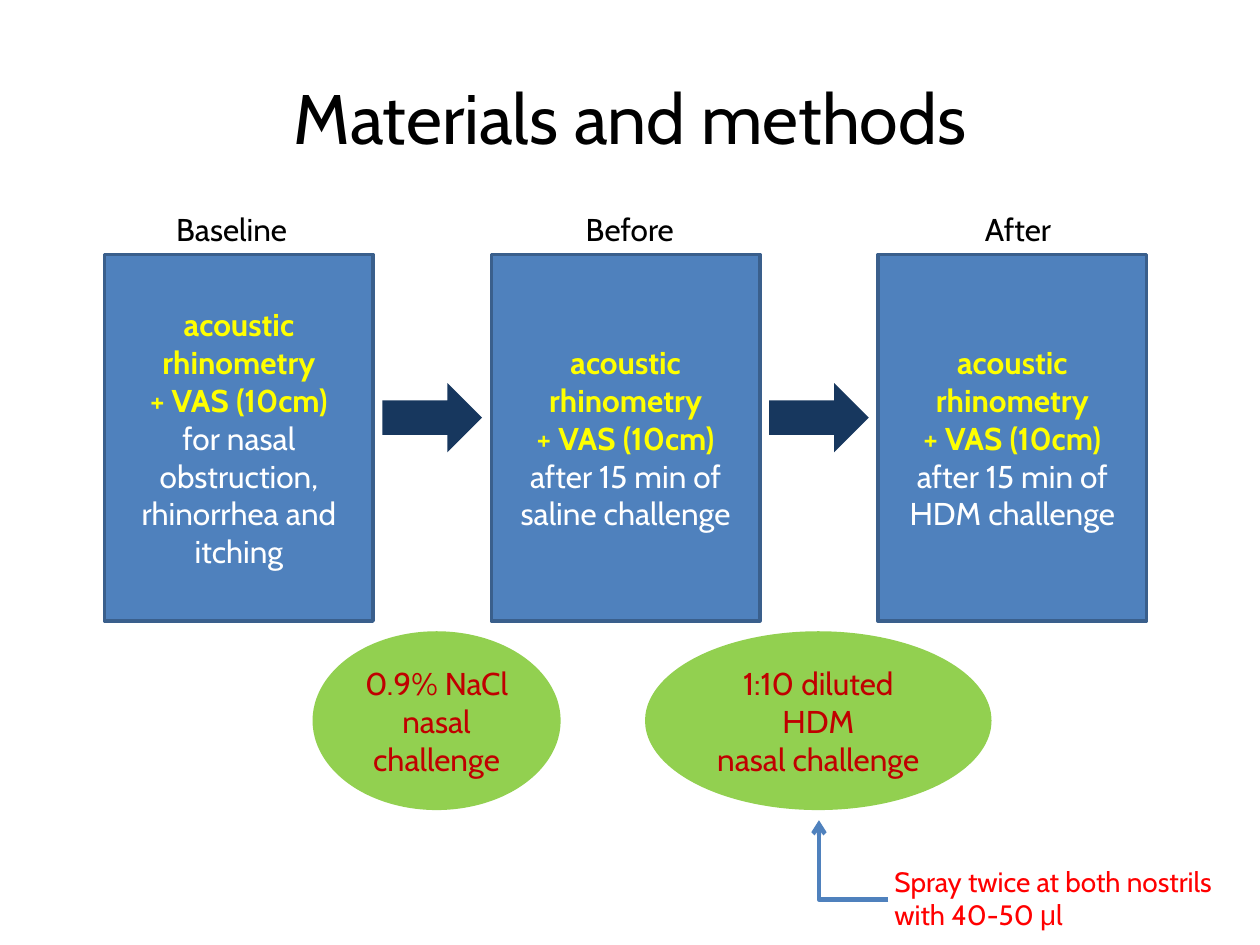
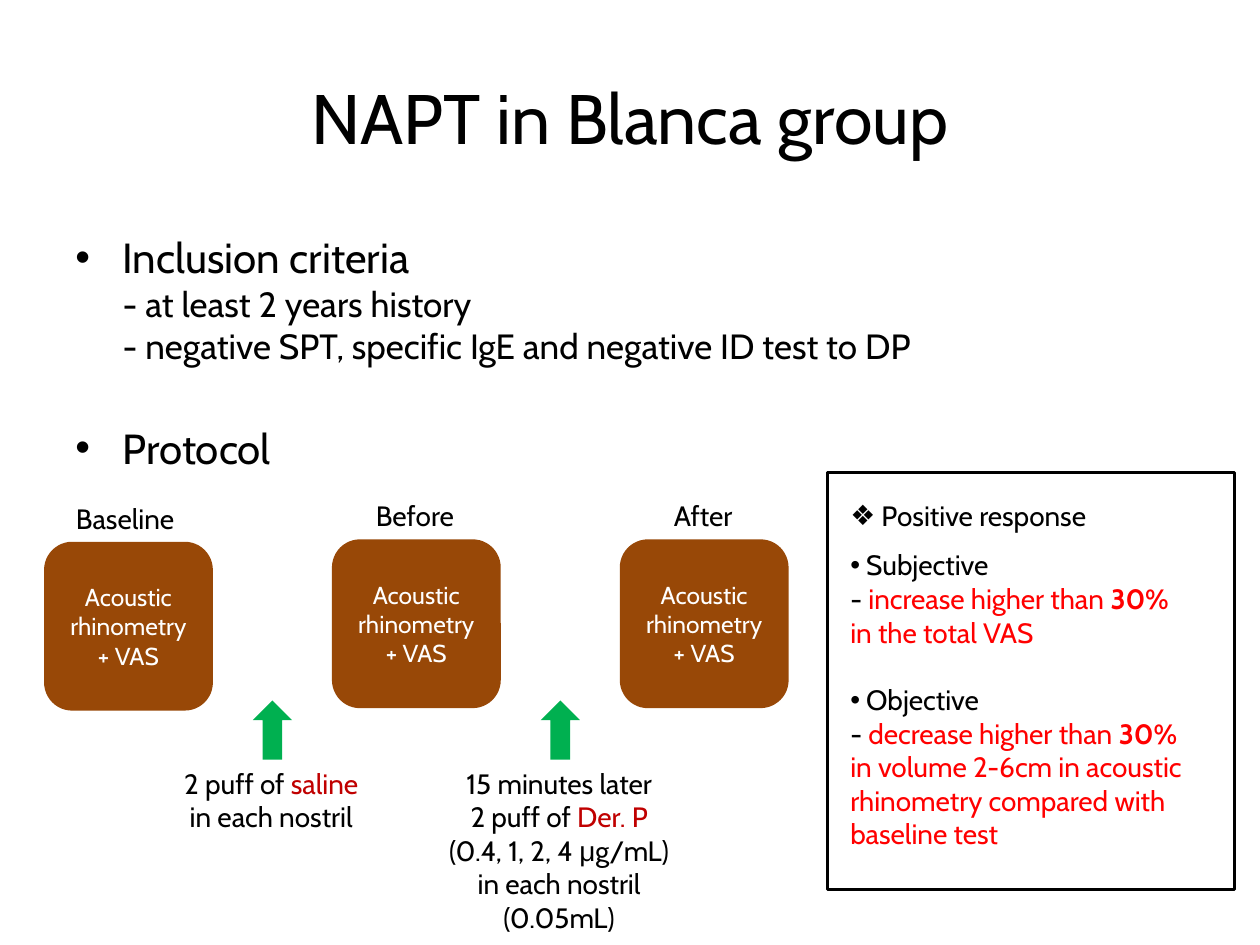
"""Builds two slides on nasal provocation: study methods and the NAPT protocol."""
from lxml import etree
from pptx import Presentation
from pptx.dml.color import RGBColor
from pptx.enum.shapes import MSO_CONNECTOR, MSO_SHAPE
from pptx.enum.text import MSO_ANCHOR, MSO_AUTO_SIZE, PP_ALIGN
from pptx.oxml.ns import qn
from pptx.util import Pt

RECT, ROUND, OVAL = MSO_SHAPE.RECTANGLE, MSO_SHAPE.ROUNDED_RECTANGLE, MSO_SHAPE.OVAL
RIGHT_ARROW, UP_ARROW = MSO_SHAPE.RIGHT_ARROW, MSO_SHAPE.UP_ARROW
ELBOW = MSO_CONNECTOR.ELBOW
LEFT, CENTER = PP_ALIGN.LEFT, PP_ALIGN.CENTER
TOP, MIDDLE = MSO_ANCHOR.TOP, MSO_ANCHOR.MIDDLE
GROW, FIXED = MSO_AUTO_SIZE.SHAPE_TO_FIT_TEXT, MSO_AUTO_SIZE.NONE

COLOURS = {
    "black": "000000", "white": "FFFFFF", "yellow": "FFFF00", "red": "FF0000",
    "dark red": "C00000", "blue": "4F81BD", "edge blue": "3A5F8C", "navy": "17375E",
    "lime": "92D050", "brown": "984807", "green": "00B050",
}
FONT, SYMBOL_FONT = "Cabin", "Arial"
SLIDE_SIZE = (720, 540)
TITLE_AREA = (36, 21.6, 648, 90)

METHODS_TITLE = "Materials and methods"
MEASUREMENT = "acoustic rhinometry"
VAS = "VAS (10cm)\n"
VISITS = [
    ("Baseline", (93.6, 81.4), "for nasal obstruction, rhinorrhea and itching"),
    ("Before", (327.6, 66.2), "after 15 min of saline challenge"),
    ("After", (555.8, 53.3), "after 15 min of HDM challenge"),
]
CHALLENGES = [
    ("0.9% NaCl nasal challenge", 178.6, 141.8),
    ("1:10 diluted HDM\nnasal challenge", 368.6, 198),
]
SPRAY = [
    {"runs": [("Spray twice at both nostrils", {})]},
    {"runs": [("with 40-50 ", {}), ("μ", {"font": SYMBOL_FONT}), ("l", {})]},
]
SPRAY_AREA = (504, 490.3, 216.7, 46)
SPRAY_ARROW = (507.6, 514.1, 468, 468.7)

NAPT_TITLE = "NAPT in Blanca group"
OUTLINE = [
    {"bullet": "•", "indent": 27, "before": 2, "runs": [
        ("Inclusion criteria\n", {"size": 24}),
        ("- at least 2 years history\n"
         "- negative SPT, specific IgE and negative ID test to DP", {"size": 20})]},
    {"bullet": "•", "indent": 27, "before": 32, "runs": [("Protocol", {"size": 24})]},
]
STAGE_TEXT = "Acoustic rhinometry\n+ VAS"
STAGES = [("Baseline", 74.2, 309.6), ("Before", 60.5, 308.2), ("After", 49, 308.2)]
DARK_RED = {"colour": "dark red"}
DOSES = [
    (121, 46, [("2 puff of ", {}), ("saline\n", DARK_RED), ("in each nostril", {})]),
    (157, 104.4, [
        ("15 minutes later\n2 puff of ", {}), ("Der. P\n", DARK_RED),
        ("(0.4, 1, 2, 4 ", {}), ("μ", {"font": SYMBOL_FONT}),
        ("g/mL)\nin each nostril\n(0.05mL)", {})]),
]
RED = {"colour": "red"}
RED_BOLD = {"colour": "red", "bold": True}
RESPONSE_HEADING = [{"bullet": "❖", "runs": [(" Positive response", {})]}]
RESPONSE = [
    {"bullet": "•", "runs": [
        (" Subjective\n- ", {}), ("increase higher than ", RED), ("30%\n", RED_BOLD),
        ("in the total VAS", RED)]},
    {"bullet": "•", "before": 19.4, "runs": [
        (" Objective\n- ", {}), ("decrease higher than ", RED), ("30%\n", RED_BOLD),
        ("in volume 2-6cm in acoustic\nrhinometry compared with\nbaseline test", RED)]},
]


def plain(text):
    return [{"runs": [(text, {})]}]


def set_all(target, values):
    for name, value in values.items():
        setattr(target, name, value)


def add_run(paragraph, text, look):
    for index, line in enumerate(text.split("\n")):
        if index:
            paragraph.add_line_break()
        if line:
            run = paragraph.add_run()
            run.text = line
            set_all(run.font, {"name": look["font"], "size": Pt(look["size"]),
                               "bold": look["bold"]})
            run.font.color.rgb = RGBColor.from_string(COLOURS[look["colour"]])


def write(frame, paragraphs, size, colour="black", align=LEFT, anchor=TOP,
          wrap=True, fit=FIXED):
    set_all(frame, {"word_wrap": wrap, "vertical_anchor": anchor, "auto_size": fit})
    base = {"font": FONT, "size": size, "bold": False, "colour": colour}
    for index, content in enumerate(paragraphs):
        paragraph = frame.add_paragraph() if index else frame.paragraphs[0]
        set_all(paragraph, {"alignment": align,
                            "space_before": Pt(content.get("before", 0))})
        for text, changes in content["runs"]:
            add_run(paragraph, text, {**base, **changes})
        if "bullet" in content:
            properties = paragraph._p.get_or_add_pPr()
            indent = Pt(content.get("indent", 0))
            properties.set("marL", str(indent))
            properties.set("indent", str(-indent))
            etree.SubElement(properties, qn("a:buFont"), typeface=SYMBOL_FONT)
            etree.SubElement(properties, qn("a:buChar"), char=content["bullet"])


def add_text(slide, area, paragraphs, size, **layout):
    box = slide.shapes.add_textbox(*map(Pt, area))
    write(box.text_frame, paragraphs, size, **layout)


def add_note(slide, area, paragraphs, size, **layout):
    add_text(slide, area, paragraphs, size, wrap=False, fit=GROW, **layout)


def add_block(slide, kind, area, fill=None, line=None):
    block = slide.shapes.add_shape(kind, *map(Pt, area))
    block.shadow.inherit = False
    if fill:
        block.fill.solid()
        block.fill.fore_color.rgb = RGBColor.from_string(COLOURS[fill])
    else:
        block.fill.background()
    if line:
        block.line.color.rgb = RGBColor.from_string(COLOURS[line])
        block.line.width = Pt(2)
    else:
        block.line.fill.background()
    return block


def add_bent_arrow(slide, ends, colour, width):
    arrow = slide.shapes.add_connector(ELBOW, *map(Pt, ends))
    arrow.line.color.rgb = RGBColor.from_string(COLOURS[colour])
    arrow.line.width = Pt(width)
    properties = arrow._element.spPr
    properties.find(qn("a:prstGeom")).set("prst", "bentConnector2")
    etree.SubElement(properties.find(qn("a:ln")), qn("a:tailEnd"), type="arrow")
    etree.SubElement(properties, qn("a:effectLst"))


def add_slide(deck, title):
    slide = deck.slides.add_slide(deck.slide_layouts[6])
    add_text(slide, TITLE_AREA, plain(title), 40, align=CENTER, anchor=MIDDLE)
    return slide


def build_methods(deck):
    slide = add_slide(deck, METHODS_TITLE)
    first, step, top, width, height = 59.8, 221, 145.4, 153.4, 209.5
    arrow_width, arrow_height = 56.9, 39.6
    for index, (label, (label_left, label_width), timing) in enumerate(VISITS):
        left = first + index * step
        visit = add_block(slide, RECT, (left, top, width, height), "blue", "edge blue")
        write(visit.text_frame, [
            {"runs": [(MEASUREMENT, {"bold": True})]},
            {"runs": [("+ ", {}), (VAS, {"bold": True}), (timing, {"colour": "white"})]},
        ], 18, colour="yellow", align=CENTER, anchor=MIDDLE)
        add_note(slide, (label_left, 116.6, label_width, 29), plain(label), 18)
        if index < len(VISITS) - 1:
            arrow_left = left + (width + step - arrow_width) / 2
            add_block(slide, RIGHT_ARROW, (arrow_left, 218.9, arrow_width, arrow_height),
                      "navy")
    for text, left, oval_width in CHALLENGES:
        challenge = add_block(slide, OVAL, (left, 360.7, oval_width, 102.2), "lime")
        write(challenge.text_frame, plain(text), 18, colour="dark red", align=CENTER,
              anchor=MIDDLE)
    add_bent_arrow(slide, SPRAY_ARROW, "blue", 2.5)
    add_note(slide, SPRAY_AREA, SPRAY, 16, colour="red")


def build_napt(deck):
    slide = add_slide(deck, NAPT_TITLE)
    add_text(slide, (36, 128.9, 648, 356.4), OUTLINE, 20)
    first, step, side = 25.2, 164.5, 96.5
    for index, (label, label_width, top) in enumerate(STAGES):
        left = first + index * step
        stage = add_block(slide, ROUND, (left, top, side, side), "brown")
        write(stage.text_frame, plain(STAGE_TEXT), 14, colour="white", align=CENTER,
              anchor=MIDDLE)
        label_left = left + (side - label_width) / 2
        add_note(slide, (label_left, top - 26.6, label_width, 26.6), plain(label), 16)
    for index, (width, height, runs) in enumerate(DOSES):
        middle = first + index * step + (side + step) / 2
        add_block(slide, UP_ARROW, (middle - 11.2, 400.3, 22.4, 33.8), "green")
        add_note(slide, (middle - width / 2 - 0.7, 434.2, width, height),
                 [{"runs": runs}], 16, align=CENTER)
    add_block(slide, RECT, (473, 270, 232.6, 238.3), line="black")
    add_note(slide, (478.8, 281.5, 157, 26.6), RESPONSE_HEADING, 16)
    add_note(slide, (478.8, 309.6, 220.3, 181.4), RESPONSE, 16)


def main():
    deck = Presentation()
    deck.slide_width, deck.slide_height = map(Pt, SLIDE_SIZE)
    build_methods(deck)
    build_napt(deck)
    deck.save("out.pptx")


if __name__ == "__main__":
    main()
